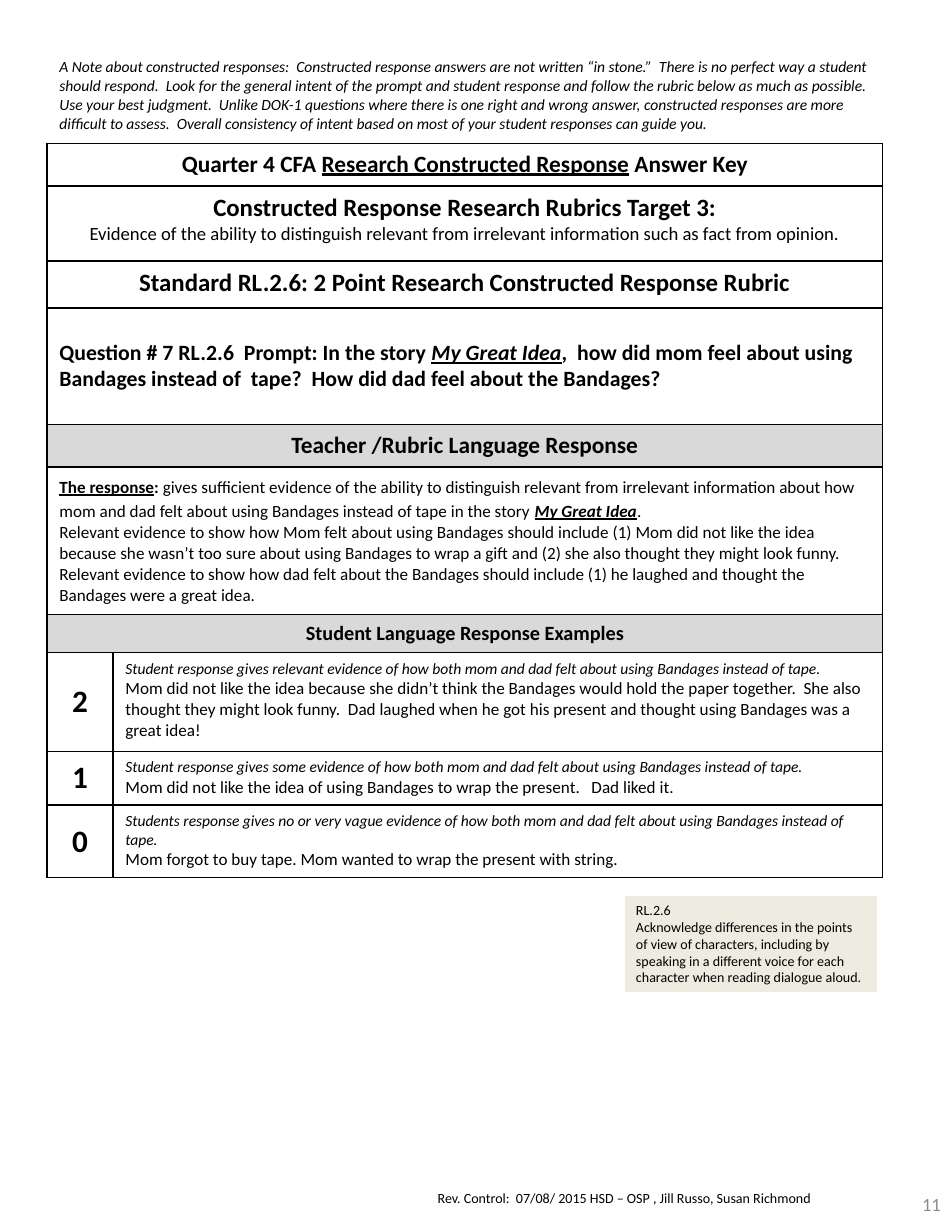
from pptx import Presentation
from pptx.dml.color import RGBColor
from pptx.enum.shapes import MSO_SHAPE
from pptx.enum.text import MSO_ANCHOR, PP_ALIGN
from pptx.oxml.ns import qn
from pptx.util import Inches, Pt
from lxml import etree

RECT = MSO_SHAPE.RECTANGLE
TOP, MID = MSO_ANCHOR.TOP, MSO_ANCHOR.MIDDLE
LEFT, MIDDLE, RIGHT = PP_ALIGN.LEFT, PP_ALIGN.CENTER, PP_ALIGN.RIGHT
FONT = "Calibri"
HUES = {"ink": "000000", "band": "D9D9D9", "note": "EEECE1", "page": "8C8C8C"}

INTRO = (
    "A Note about constructed responses:  Constructed response answers are not "
    "written “in stone.”  There is no perfect way a student should respond.  Look "
    "for the general intent of the prompt and student response and follow the rubric "
    "below as much as possible. Use your best judgment.  Unlike DOK-1 questions where "
    "there is one right and wrong answer, constructed responses are more difficult to "
    "assess.  Overall consistency of intent based on most of your student responses "
    "can guide you."
)
HEADS = [
    (0.82, LEFT, None, [[(INTRO, 10, "i")]]),
    (0.38, MIDDLE, None, [[("Quarter 4 CFA ", 15, "b"),
                           ("Research Constructed Response", 15, "bu"),
                           (" Answer Key", 15, "b")]]),
    (0.67, MIDDLE, None, [
        [("Constructed Response Research Rubrics Target 3:", 16, "b")],
        [("Evidence of the ability to distinguish relevant from irrelevant "
          "information such as fact from opinion.", 12, "")]]),
    (0.42, MIDDLE, None, [
        [("Standard RL.2.6: 2 Point Research Constructed Response Rubric", 16, "b")]]),
    (1.04, LEFT, None, [
        [("Question # 7 RL.2.6  Prompt: In the story ", 14, "b"),
         ("My Great Idea", 14, "biu"),
         (",  how did mom feel about using Bandages instead of  tape?  "
          "How did dad feel about the Bandages?", 14, "b")]]),
    (0.38, MIDDLE, "band", [[("Teacher /Rubric Language Response", 15, "b")]]),
    (1.32, LEFT, None, [
        [("The response", 11, "bu"), (": ", 11, "b"),
         ("gives sufficient evidence of the ability to distinguish relevant from "
          "irrelevant information about how mom and dad felt about using Bandages "
          "instead of tape in the story ", 11, ""),
         ("My Great Idea", 11, "biu"), (".", 11, "")],
        [("Relevant evidence to show how Mom felt about using Bandages should include "
          "(1) Mom did not like the idea because she wasn’t too sure about using "
          "Bandages to wrap a gift and (2) she also thought they might look funny.",
          11, "")],
        [("Relevant evidence to show how dad felt about the Bandages should include "
          "(1) he laughed and thought the Bandages were a great idea.", 11, "")]]),
    (0.34, MIDDLE, "band", [[("Student Language Response Examples", 13, "b")]]),
]
SCORES = [
    (0.88, "2", "Student response gives relevant evidence of how both mom and dad felt "
     "about using Bandages instead of tape.",
     "Mom did not like the idea because she didn’t think the Bandages would hold the "
     "paper together.  She also thought they might look funny.  Dad laughed when he got "
     "his present and thought using Bandages was a great idea!"),
    (0.48, "1", "Student response gives some evidence of how both mom and dad felt "
     "about using Bandages instead of tape.",
     "Mom did not like the idea of using Bandages to wrap the present.   Dad liked it."),
    (0.65, "0", "Students response gives no or very vague evidence of how both mom and "
     "dad felt about using Bandages instead of tape.",
     "Mom forgot to buy tape. Mom wanted to wrap the present with string."),
]
PROMPT, RUBRIC = 4, 6


def tint(fill, hue):
    if hue:
        fill.solid()
        fill.fore_color.rgb = RGBColor.from_string(HUES[hue])
    else:
        fill.background()


class Sheet:
    def __init__(self, slide):
        self.slide = slide

    def words(self, frame, paras, align=LEFT, hue="ink"):
        frame.word_wrap = True
        for i, parts in enumerate(paras):
            para = frame.add_paragraph() if i else frame.paragraphs[0]
            para.alignment = align
            for text, size, style in parts:
                run = para.add_run()
                run.text = text
                font = run.font
                font.name, font.size = FONT, Pt(size)
                font.bold = "b" in style
                font.italic = "i" in style
                font.underline = "u" in style
                font.color.rgb = RGBColor.from_string(HUES[hue])

    def label(self, box, text, size, align=LEFT, hue="ink", anchor=TOP):
        shape = self.slide.shapes.add_textbox(*map(Inches, box))
        shape.text_frame.vertical_anchor = anchor
        self.words(shape.text_frame, [[(text, size, "")]], align, hue)

    def panel(self, box, hue, lines, size):
        shape = self.slide.shapes.add_shape(RECT, *map(Inches, box))
        shape.shadow.inherit = False
        tint(shape.fill, hue)
        shape.line.fill.background()
        shape.text_frame.vertical_anchor = TOP
        self.words(shape.text_frame, [[(line, size, "")] for line in lines])

    def grid(self, box, cols, rows):
        table = self.slide.shapes.add_table(
            len(rows), len(cols), *map(Inches, box)).table
        table.first_row = table.horz_banding = False
        for col, width in zip(table.columns, cols):
            col.width = Inches(width)
        for row, height in zip(table.rows, rows):
            row.height = Inches(height)
        return table

    def edge(self, cell, sides):
        props = cell._tc.get_or_add_tcPr()
        for side in "LRTB":
            line = etree.SubElement(props, qn("a:ln" + side), w=str(Pt(1)))
            if side in sides:
                fill = etree.SubElement(line, qn("a:solidFill"))
                etree.SubElement(fill, qn("a:srgbClr"), val=HUES["ink"])
            else:
                etree.SubElement(line, qn("a:noFill"))

    def cell(self, cell, paras, align=LEFT, hue=None, anchor=TOP):
        cell.margin_left = cell.margin_right = Inches(0.11)
        cell.margin_top = cell.margin_bottom = Inches(0.06)
        cell.vertical_anchor = anchor
        tint(cell.fill, hue)
        self.words(cell.text_frame, paras, align)


def main():
    deck = Presentation()
    deck.slide_width, deck.slide_height = Inches(8.5), Inches(11)
    sheet = Sheet(deck.slides.add_slide(deck.slide_layouts[6]))

    sheet.label((3.81, 10.57, 4.25, 0.26),
                "Rev. Control:  07/08/ 2015 HSD – OSP , Jill Russo, Susan Richmond", 9)
    sheet.label((7.83, 10.5, 0.67, 0.5), "11", 12, RIGHT, "page", MID)

    rows = [item[0] for item in HEADS + SCORES]
    table = sheet.grid((0.42, 0.46, 7.46, 7.39), (0.59, 6.87), rows)
    for r in range(len(rows)):
        for c in range(2):
            sheet.edge(table.cell(r, c), "LRTB" if r else "B")
    for r, (_, align, hue, paras) in enumerate(HEADS):
        head = table.cell(r, 0)
        head.merge(table.cell(r, 1))
        sheet.cell(head, paras, align, hue, MID if r == PROMPT else TOP)
    table.cell(RUBRIC, 0).text_frame.paragraphs[0].line_spacing = 1.15
    for r, (_, score, rule, reply) in enumerate(SCORES, len(HEADS)):
        sheet.cell(table.cell(r, 0), [[(score, 20, "b")]], MIDDLE, anchor=MID)
        sheet.cell(table.cell(r, 1), [[(rule, 10, "i")], [(reply, 11, "")]])

    sheet.panel((5.58, 8, 2.25, 0.86), "note", [
        "RL.2.6",
        "Acknowledge differences in the points of view of characters, including by "
        "speaking in a different voice for each character when reading dialogue aloud.",
    ], 9)
    deck.save("out.pptx")


if __name__ == "__main__":
    main()
